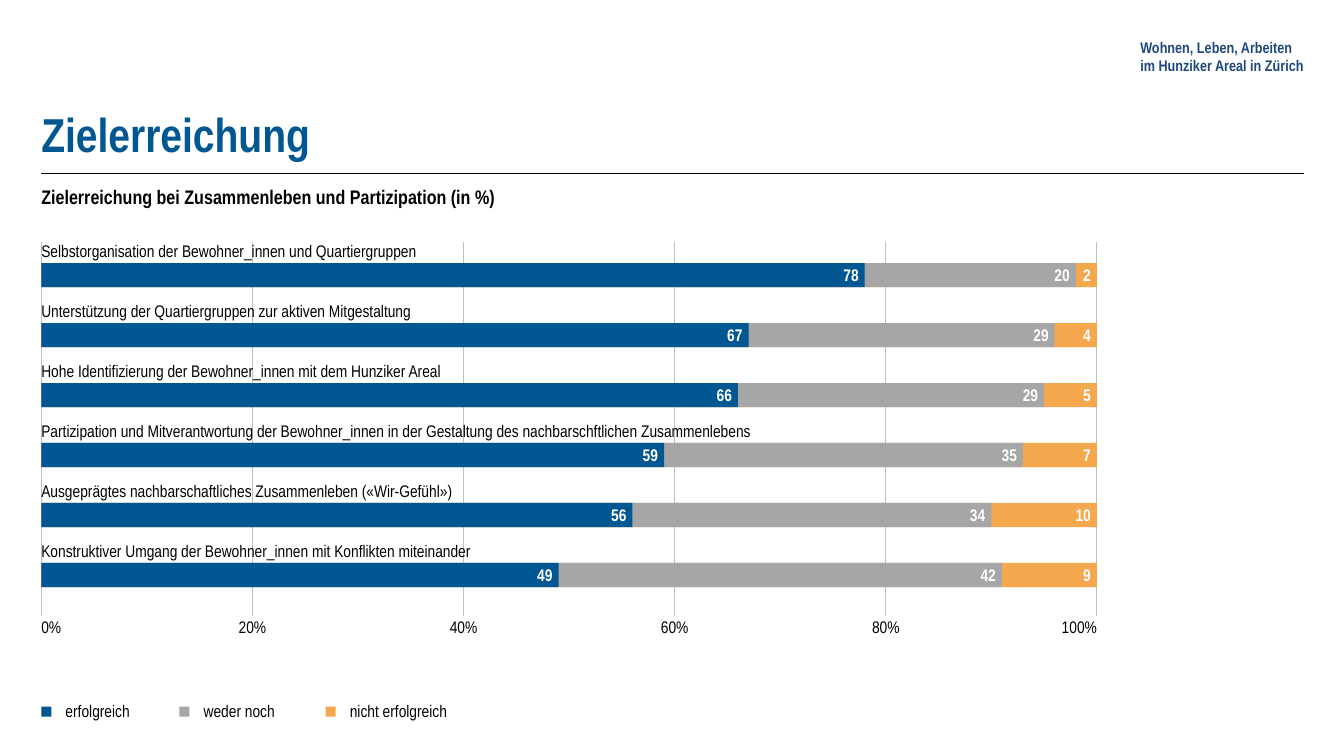
from lxml.etree import SubElement
from pptx import Presentation
from pptx.dml.color import RGBColor
from pptx.enum.shapes import MSO_CONNECTOR, MSO_SHAPE
from pptx.enum.text import MSO_ANCHOR, MSO_AUTO_SIZE, PP_ALIGN
from pptx.oxml.ns import qn
from pptx.util import Inches, Pt

BLUE = RGBColor(0x00, 0x57, 0x91)
GREY = RGBColor(0xA6, 0xA6, 0xA6)
ORANGE = RGBColor(0xF5, 0xA7, 0x4D)
NAVY = RGBColor(0x1F, 0x49, 0x7D)
GRID = RGBColor(0xBF, 0xBF, 0xBF)
BLACK = RGBColor(0x00, 0x00, 0x00)
WHITE = RGBColor(0xFF, 0xFF, 0xFF)

FONT = "Arial Narrow"
LEFT = 0.41
CONTENT_WIDTH = 12.52
ROW_PITCH = 0.595
BAR_OFFSET = 0.22
BAR_HEIGHT = 0.24
TICK_WIDTH = 0.47
SWATCH = 0.1

GOALS = [
    ("Selbstorganisation der Bewohner_innen und Quartiergruppen", 78, 20, 2),
    ("Unterstützung der Quartiergruppen zur aktiven Mitgestaltung", 67, 29, 4),
    ("Hohe Identifizierung der Bewohner_innen mit dem Hunziker Areal", 66, 29, 5),
    ("Partizipation und Mitverantwortung der Bewohner_innen in der Gestaltung "
     "des nachbarschftlichen Zusammenlebens", 59, 35, 7),
    ("Ausgeprägtes nachbarschaftliches Zusammenleben («Wir-Gefühl»)", 56, 34, 10),
    ("Konstruktiver Umgang der Bewohner_innen mit Konflikten miteinander", 49, 42, 9),
]
LEGEND = [
    (0, "erfolgreich", BLUE),
    (1.37, "weder noch", GREY),
    (2.82, "nicht erfolgreich", ORANGE),
]


def set_text(frame, text, size, color, bold=False, align=PP_ALIGN.LEFT,
             anchor=MSO_ANCHOR.TOP, right_inset=0):
    """Fill a text frame with one formatted paragraph and return it."""
    frame.text = text
    frame.word_wrap = True
    frame.auto_size = MSO_AUTO_SIZE.NONE
    frame.vertical_anchor = anchor
    frame.margin_left = frame.margin_top = frame.margin_bottom = 0
    frame.margin_right = Inches(right_inset)
    paragraph = frame.paragraphs[0]
    paragraph.alignment = align
    paragraph.font.name = FONT
    paragraph.font.size = Pt(size)
    paragraph.font.bold = bold
    paragraph.font.color.rgb = color
    return paragraph


def add_label(slide, left, top, width, height, text, size=12, color=BLACK, **style):
    """Add a text box without insets and return its paragraph."""
    box = slide.shapes.add_textbox(
        Inches(left), Inches(top), Inches(width), Inches(height))
    return set_text(box.text_frame, text, size, color, **style)


def add_rule(slide, start, end, color, weight):
    """Draw a straight line without a shadow."""
    rule = slide.shapes.add_connector(
        MSO_CONNECTOR.STRAIGHT, *map(Inches, start), *map(Inches, end))
    rule.line.color.rgb = color
    rule.line.width = Pt(weight)
    SubElement(rule._element.spPr, qn("a:effectLst"))


def add_block(slide, left, top, width, height, color):
    """Add a plain filled rectangle and return it."""
    block = slide.shapes.add_shape(
        MSO_SHAPE.RECTANGLE, Inches(left), Inches(top), Inches(width), Inches(height))
    block.shadow.inherit = False
    block.fill.solid()
    block.fill.fore_color.rgb = color
    block.line.fill.background()
    return block


def add_heading(slide, left, top, width):
    """Place the project name, title, rule and subtitle."""
    add_label(slide, left + 10.9, top, 1.86, 0.42,
              "Wohnen, Leben, Arbeiten\vim Hunziker Areal in Zürich", 11, NAVY,
              bold=True, anchor=MSO_ANCHOR.MIDDLE)
    title = slide.shapes.title
    title.left, title.top = Inches(left), Inches(top + 0.01)
    title.width, title.height = Inches(width), Inches(1.25)
    set_text(title.text_frame, "Zielerreichung", 34, BLUE,
             bold=True, anchor=MSO_ANCHOR.BOTTOM)
    rule_top = top + 1.37
    add_rule(slide, (left, rule_top), (left + width, rule_top), BLACK, 1)
    subtitle = add_label(slide, left, rule_top + 0.11, width, 0.35,
                         "Zielerreichung bei Zusammenleben und Partizipation (in %)",
                         14, bold=True)
    subtitle.space_before = Pt(2.8)


def add_scale(slide, left, top, width, height):
    """Draw the percentage grid with its tick labels."""
    for percent in range(0, 101, 20):
        grid_x = left + width * percent / 100
        add_rule(slide, (grid_x, top), (grid_x, top + height), GRID, 0.75)
        shift, align = {0: (0, PP_ALIGN.LEFT), 100: (1, PP_ALIGN.RIGHT)}.get(
            percent, (0.5, PP_ALIGN.CENTER))
        add_label(slide, grid_x - shift * TICK_WIDTH, top + height + 0.01,
                  TICK_WIDTH, 0.24, f"{percent}%", align=align)


def add_goal(slide, left, top, width, goal):
    """Draw one goal as overlapping bars below its label."""
    name, achieved, neutral, missed = goal
    bars = [(100, missed, ORANGE), (100 - missed, neutral, GREY),
            (achieved, achieved, BLUE)]
    for end, value, color in bars:
        bar = add_block(slide, left, top + BAR_OFFSET, width * end / 100,
                        BAR_HEIGHT, color)
        set_text(bar.text_frame, str(value), 12, WHITE, bold=True,
                 align=PP_ALIGN.RIGHT, anchor=MSO_ANCHOR.MIDDLE, right_inset=0.06)
    add_label(slide, left, top, width, 0.27, name)


def add_goals(slide, left, top, width, height):
    """Place the scale and one row per goal in the given box."""
    add_scale(slide, left, top, width, height)
    for row, goal in enumerate(GOALS):
        add_goal(slide, left, top - 0.01 + row * ROW_PITCH, width, goal)


def add_legend(slide, left, top):
    """Place the colour key."""
    for offset, name, color in LEGEND:
        add_block(slide, left + offset, top + 0.06, SWATCH, SWATCH, color)
        add_label(slide, left + offset + 0.24, top, 1.36, 0.25, name)


def main():
    """Build and save the slide."""
    presentation = Presentation()
    presentation.slide_width = Inches(13.33)
    presentation.slide_height = Inches(7.5)
    slide = presentation.slides.add_slide(presentation.slide_layouts[5])
    add_heading(slide, LEFT, 0.35, CONTENT_WIDTH)
    add_goals(slide, LEFT, 2.4, 10.47, 3.71)
    add_legend(slide, LEFT, 6.95)
    presentation.save("out.pptx")


if __name__ == "__main__":
    main()
